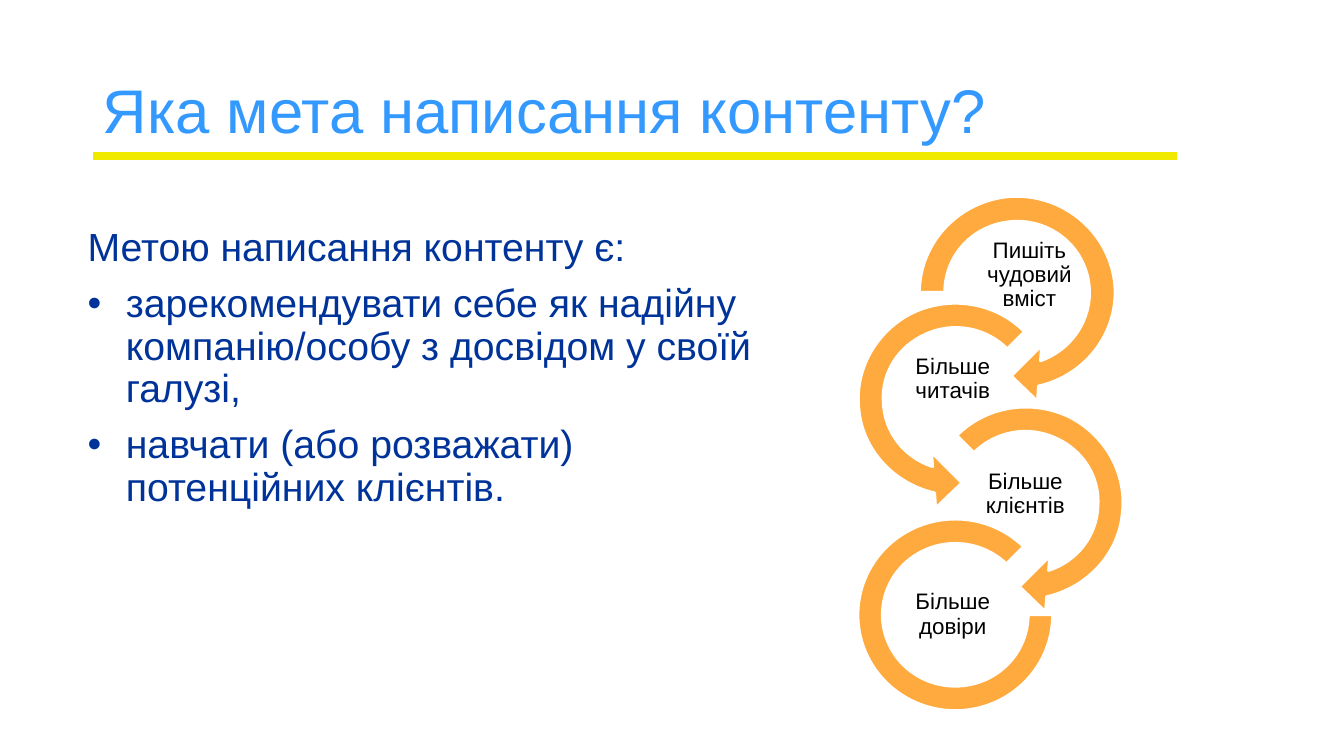
from lxml import etree
from pptx import Presentation
from pptx.dml.color import RGBColor
from pptx.enum import shapes, text
from pptx.oxml import ns
from pptx.util import Inches, Pt

SKY = RGBColor(0x33, 0x99, 0xFF)
NAVY = RGBColor(0x00, 0x33, 0x99)
YELLOW = RGBColor(0xF0, 0xEA, 0x00)
ORANGE = RGBColor(0xFF, 0xAA, 0x3F)
WHITE = RGBColor(0xFF, 0xFF, 0xFF)
BLACK = RGBColor(0x00, 0x00, 0x00)


def style(para, size, color):
    para.line_spacing = 0.9
    para.font.name = "Arial"
    para.font.size = Pt(size)
    para.font.color.rgb = color


def paint(shape):
    shape.shadow.inherit = False
    shape.fill.solid()
    shape.fill.fore_color.rgb = ORANGE
    shape.line.color.rgb = WHITE
    shape.line.width = Pt(2)


deck = Presentation()
deck.slide_width, deck.slide_height = Inches(13.33), Inches(7.5)
slide = deck.slides.add_slide(deck.slide_layouts[5])

rule = slide.shapes.add_connector(
    shapes.MSO_CONNECTOR.STRAIGHT, Inches(0.92), Inches(1.55), Inches(11.67), Inches(1.55))
rule.line.color.rgb = YELLOW
rule.line.width = Pt(6)
etree.SubElement(rule._element.spPr, ns.qn("a:effectLst"))

title = slide.shapes.title
title.left, title.top = Inches(0.92), Inches(0.4)
title.width, title.height = Inches(11.5), Inches(1.45)
title.text_frame.text = "Яка мета написання контенту?"
title.text_frame.vertical_anchor = text.MSO_ANCHOR.MIDDLE
head = title.text_frame.paragraphs[0]
head.alignment = text.PP_ALIGN.LEFT
style(head, 44, SKY)

body = slide.shapes.add_textbox(Inches(0.65), Inches(2.21), Inches(7.09), Inches(4.95)).text_frame
body.word_wrap = True
body.text = "\n".join([
    "Метою написання контенту є:",
    "зарекомендувати себе як надійну компанію/особу з досвідом у своїй галузі,",
    "навчати (або розважати) потенційних клієнтів.",
])
for row, para in enumerate(body.paragraphs):
    props = para._p.get_or_add_pPr()
    props.set("marL", str(Inches(0.5 if row else 0.12)))
    props.set("indent", str(Inches(-0.38 if row else 0)))
    if row:
        tint = etree.SubElement(props, ns.qn("a:buClr"))
        etree.SubElement(tint, ns.qn("a:srgbClr"), val=str(NAVY))
        etree.SubElement(props, ns.qn("a:buFont"), typeface="Arial")
        etree.SubElement(props, ns.qn("a:buChar"), char="•")
        para.space_before = Pt(10)
    style(para, 28, NAVY)

first = [
    [(9.12, 2.9)],
    [(9.12, 2.41), (9.51, 1.99), (10.02, 1.95)],
    [(10.52, 1.92), (10.97, 2.27), (11.05, 2.77)],
    [(11.12, 3.26), (10.79, 3.72), (10.3, 3.83)],
    [(10.29, 3.98)], [(10.03, 3.73)], [(10.33, 3.43)], [(10.32, 3.58)],
    [(10.66, 3.46), (10.87, 3.11), (10.79, 2.75)],
    [(10.71, 2.4), (10.38, 2.16), (10.01, 2.2)],
    [(9.64, 2.24), (9.37, 2.54), (9.37, 2.9)],
]
second = [
    [(10.16, 3.29)], [(9.99, 3.46)],
    [(9.78, 3.25), (9.46, 3.19), (9.19, 3.31)],
    [(8.91, 3.43), (8.74, 3.7), (8.76, 3.99)],
    [(8.77, 4.29), (8.97, 4.54), (9.25, 4.63)],
    [(9.24, 4.49)], [(9.54, 4.79)], [(9.28, 5.04)], [(9.27, 4.89)],
    [(8.87, 4.8), (8.56, 4.47), (8.52, 4.07)],
    [(8.47, 3.67), (8.69, 3.28), (9.06, 3.1)],
    [(9.43, 2.93), (9.87, 3), (10.16, 3.29)],
]
third = [[(19.65 - x, y + 1.03) for x, y in part] for part in second]

for route in (first, second, third):
    dots = [(Inches(x), Inches(y)) for part in route for x, y in part]
    pen = slide.shapes.build_freeform(*dots[0])
    pen.add_line_segments(dots[1:], close=True)
    arrow = pen.convert_to_shape()
    lines = iter(arrow._element.xpath(".//a:lnTo"))
    for part in route[1:]:
        group = [next(lines) for dot in part]
        if len(part) == 3:
            curve = etree.Element(ns.qn("a:cubicBezTo"))
            group[0].addprevious(curve)
            for line in group:
                curve.append(line[0])
                line.getparent().remove(line)
    paint(arrow)

ring = slide.shapes.add_shape(
    shapes.MSO_SHAPE.BLOCK_ARC, Inches(8.51), Inches(5.15), Inches(1.93), Inches(1.9))
for spot, value in enumerate((0, 189, 0.127)):
    ring.adjustments[spot] = value
paint(ring)

for left, top, words in [
    (9.71, 2.48, "Пишіть чудовий вміст"),
    (8.95, 3.51, "Більше читачів"),
    (9.67, 4.65, "Більше клієнтів"),
    (8.95, 5.85, "Більше довіри"),
]:
    label = slide.shapes.add_textbox(Inches(left), Inches(top), Inches(1), Inches(0.5)).text_frame
    label.word_wrap = True
    label.vertical_anchor = text.MSO_ANCHOR.MIDDLE
    label.margin_left = label.margin_right = Inches(0.01)
    label.margin_top = label.margin_bottom = Inches(0.01)
    label.text = words
    label.paragraphs[0].alignment = text.PP_ALIGN.CENTER
    style(label.paragraphs[0], 16, BLACK)

deck.save("out.pptx")
